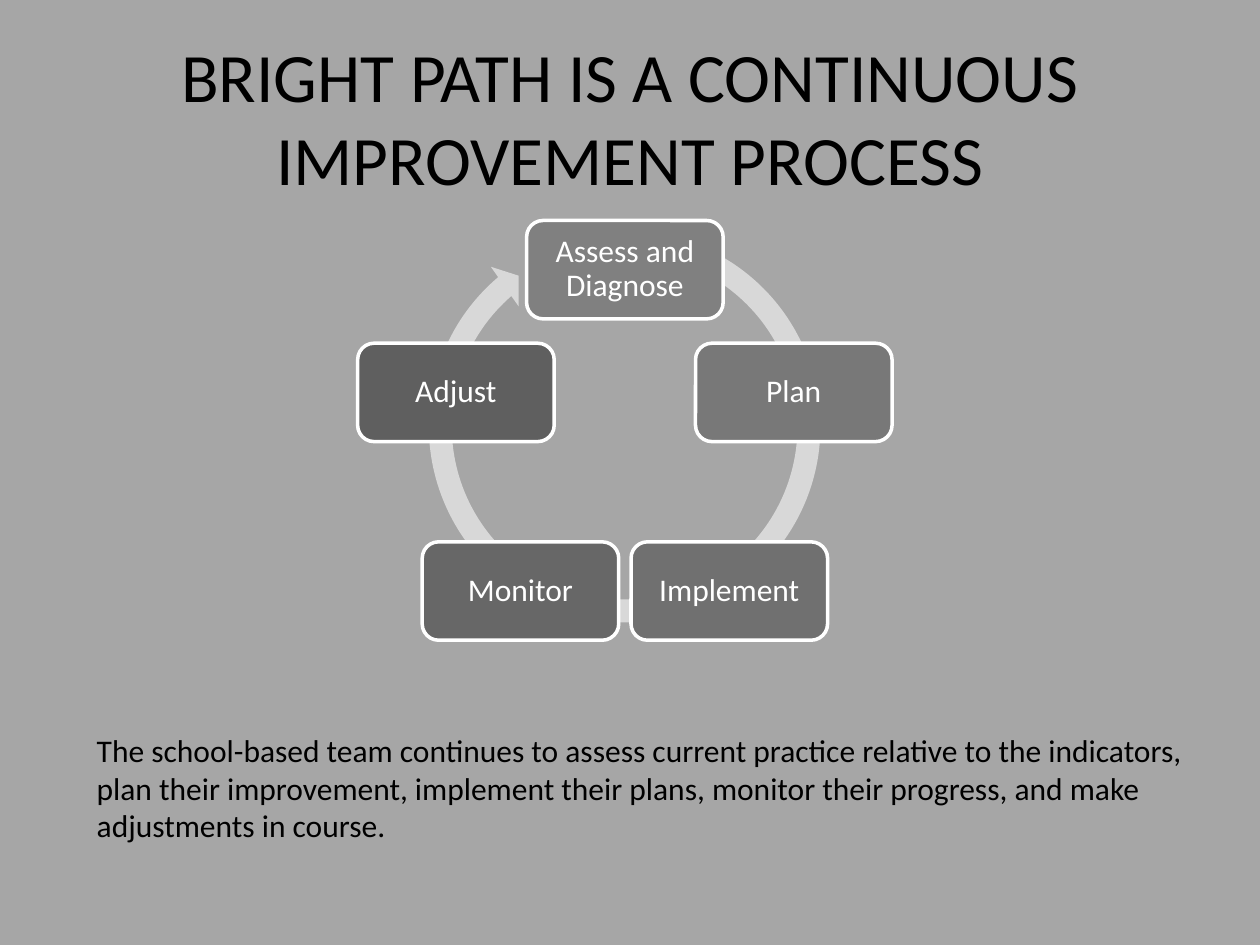
from dataclasses import dataclass
from math import cos, pi, sin

from pptx import Presentation
from pptx.dml.color import RGBColor
from pptx.enum.shapes import MSO_SHAPE
from pptx.enum.text import MSO_ANCHOR, PP_ALIGN
from pptx.shapes.autoshape import Shape
from pptx.slide import Slide
from pptx.util import Pt

ROUNDED = MSO_SHAPE.ROUNDED_RECTANGLE
CIRCULAR_ARROW = MSO_SHAPE.CIRCULAR_ARROW
TOP, MIDDLE = MSO_ANCHOR.TOP, MSO_ANCHOR.MIDDLE
LEFT, CENTER = PP_ALIGN.LEFT, PP_ALIGN.CENTER

FONT = "Calibri"
BLACK, WHITE = "000000", "FFFFFF"
CENTER_X, CENTER_Y, RADIUS = 357.1, 255.6, 101.5
STEP_WIDTH, STEP_HEIGHT = 112.3, 56.2
ARROW_SIZE = 238.3
ARROW_ADJUSTMENTS = (0.055, 3.307, 137.654, 173.924, 0.058)


@dataclass
class Step:
    label: str
    fill: str


STEPS = (
    Step("Assess and Diagnose", "808080"),
    Step("Plan", "787878"),
    Step("Implement", "707070"),
    Step("Monitor", "676767"),
    Step("Adjust", "5F5F5F"),
)


def color(value: str) -> RGBColor:
    return RGBColor.from_string(value)


def write_text(box: Shape, text: str, *, size: float = 18, ink: str = BLACK,
               align: PP_ALIGN = LEFT, anchor: MSO_ANCHOR = TOP,
               inset: float | None = None, spacing: float = 1.0) -> None:
    frame = box.text_frame
    frame.word_wrap = True
    frame.vertical_anchor = anchor
    if inset is not None:
        frame.margin_left = frame.margin_right = Pt(inset)
        frame.margin_top = frame.margin_bottom = Pt(inset)
    para = frame.paragraphs[0]
    para.alignment = align
    para.line_spacing = spacing
    span = para.add_run()
    span.text = text
    span.font.name = FONT
    span.font.size = Pt(size)
    span.font.color.rgb = color(ink)


def add_filled(page: Slide, kind: MSO_SHAPE, left: float, top: float,
               width: float, height: float, fill: str) -> Shape:
    shape = page.shapes.add_shape(kind, Pt(left), Pt(top), Pt(width), Pt(height))
    shape.shadow.inherit = False
    shape.fill.solid()
    shape.fill.fore_color.rgb = color(fill)
    shape.line.fill.background()
    return shape


def add_arrow(page: Slide) -> None:
    arrow = add_filled(page, CIRCULAR_ARROW, 237.8, 124.6, ARROW_SIZE, ARROW_SIZE, "D8D8D8")
    for index, value in enumerate(ARROW_ADJUSTMENTS):
        arrow.adjustments[index] = value


def add_step(page: Slide, step: Step, angle: float) -> None:
    left = CENTER_X + RADIUS * sin(angle) - STEP_WIDTH / 2
    top = CENTER_Y - RADIUS * cos(angle) - STEP_HEIGHT / 2
    box = add_filled(page, ROUNDED, left, top, STEP_WIDTH, STEP_HEIGHT, step.fill)
    box.line.color.rgb = color(WHITE)
    box.line.width = Pt(2)
    write_text(box, step.label, ink=WHITE, align=CENTER, anchor=MIDDLE, inset=5.4, spacing=0.9)


def main() -> None:
    """Build the improvement cycle slide and save it."""
    deck = Presentation()
    deck.slide_width, deck.slide_height = Pt(720), Pt(540)
    page = deck.slides.add_slide(deck.slide_layouts[6])
    page.background.fill.solid()
    page.background.fill.fore_color.rgb = color("A6A6A6")

    title = page.shapes.add_textbox(Pt(36), Pt(21.6), Pt(648), Pt(90))
    write_text(title, "BRIGHT PATH IS A CONTINUOUS IMPROVEMENT PROCESS",
               size=39.6, align=CENTER, anchor=MIDDLE)

    add_arrow(page)
    for index, step in enumerate(STEPS):
        add_step(page, step, 2 * pi * index / len(STEPS))

    summary = page.shapes.add_textbox(Pt(48.2), Pt(414), Pt(635.8), Pt(94.3))
    write_text(summary, "The school-based team continues to assess current practice relative to "
               "the indicators, plan their improvement, implement their plans, monitor their "
               "progress, and make adjustments in course.")

    deck.save("out.pptx")


if __name__ == "__main__":
    main()
